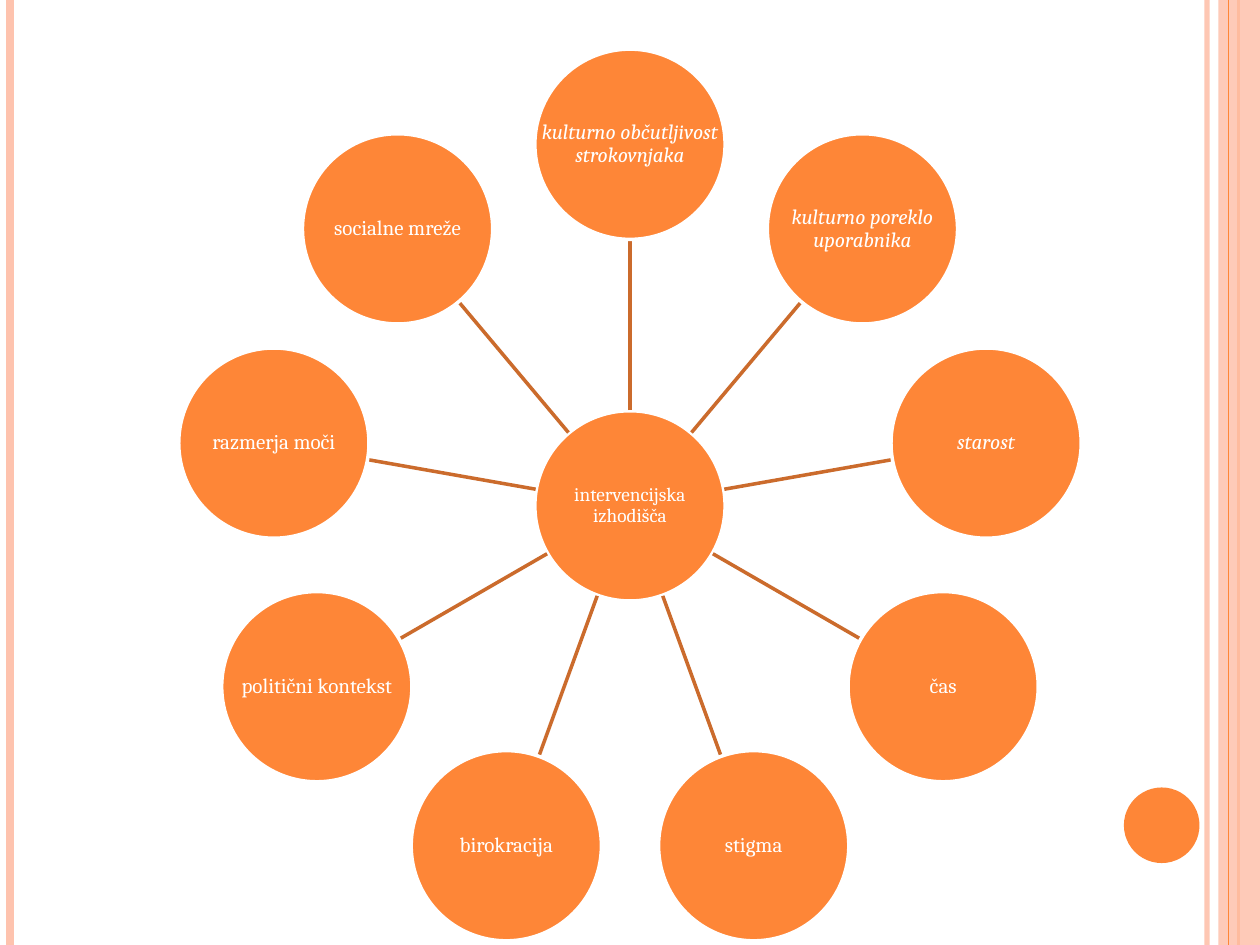
from math import cos, radians, sin

from lxml.etree import SubElement
from pptx import Presentation
from pptx.dml.color import RGBColor
from pptx.enum.shapes import MSO_CONNECTOR, MSO_SHAPE
from pptx.enum.text import MSO_ANCHOR, PP_ALIGN
from pptx.oxml.ns import qn
from pptx.util import Inches, Pt

ORANGE, DARK_ORANGE, PEACH, WHITE = "FE8637", "CB6B2C", "FEC3AE", "FFFFFF"
FONT = "Cambria"
NODE_SIZE = 1.51
LABEL_WIDTH = 1.48
ORBIT = 2.87
SPOKE_START, SPOKE_END = 0.76, 2.12

# Clockwise from the top: label, italic
TOPICS = [
    ("kulturno občutljivost strokovnjaka", True),
    ("kulturno poreklo uporabnika", True),
    ("starost", True),
    ("čas", False),
    ("stigma", False),
    ("birokracija", False),
    ("politični kontekst", False),
    ("razmerja moči", False),
    ("socialne mreže", False),
]


def paint(color_format, color):
    color_format.rgb = RGBColor.from_string(color)


def set_opacity(fill, percent):
    """Add an alpha value to a solid fill."""
    color = fill._xPr.find(qn("a:solidFill"))[0]
    SubElement(color, qn("a:alpha")).set("val", str(percent * 1000))


def add_line(slide, start, end, color, width, opacity=100):
    points = [Inches(value) for value in (*start, *end)]
    line = slide.shapes.add_connector(MSO_CONNECTOR.STRAIGHT, *points)
    line.line.width = Pt(width)
    line.line.fill.solid()
    paint(line.line.fill.fore_color, color)
    if opacity < 100:
        set_opacity(line.line.fill, opacity)
    SubElement(line._element.spPr, qn("a:effectLst"))


def add_filled_shape(slide, kind, box, color):
    shape = slide.shapes.add_shape(kind, *[Inches(value) for value in box])
    shape.shadow.inherit = False
    shape.fill.solid()
    paint(shape.fill.fore_color, color)
    shape.line.fill.background()
    return shape


def add_label(slide, center_x, center_y, text, size, italic):
    label = slide.shapes.add_textbox(
        Inches(center_x - LABEL_WIDTH / 2), Inches(center_y - NODE_SIZE / 2),
        Inches(LABEL_WIDTH), Inches(NODE_SIZE))
    frame = label.text_frame
    frame.word_wrap = True
    frame.vertical_anchor = MSO_ANCHOR.MIDDLE
    frame.margin_left = frame.margin_right = Inches(0.01)
    frame.margin_top = frame.margin_bottom = Inches(0.01)
    frame.text = text
    paragraph = frame.paragraphs[0]
    paragraph.alignment = PP_ALIGN.CENTER
    paragraph.line_spacing = 0.9
    font = paragraph.runs[0].font
    font.name, font.size, font.italic = FONT, Pt(size), italic
    paint(font.color, WHITE)


def add_node(slide, center_x, center_y, text, size=12, italic=False):
    box = (center_x - NODE_SIZE / 2, center_y - NODE_SIZE / 2, NODE_SIZE, NODE_SIZE)
    circle = add_filled_shape(slide, MSO_SHAPE.OVAL, box, ORANGE)
    paint(circle.line.color, WHITE)
    circle.line.width = Pt(2)
    add_label(slide, center_x, center_y, text, size, italic)


def add_frame(slide, left, top, width, height):
    """Vertical stripes along both edges and the round ornament."""
    right, bottom = left + width, top + height

    def add_stripe(x, color, line_width, opacity=100):
        add_line(slide, (x, top), (x, bottom), color, line_width, opacity)

    add_stripe(right - 0.42, PEACH, 3, 93)
    add_stripe(left + 0.08, PEACH, 4.5)
    add_stripe(right - 0.17, ORANGE, 1.5)
    band = add_filled_shape(slide, MSO_SHAPE.RECTANGLE, (right - 0.33, top, 0.33, height), PEACH)
    set_opacity(band.fill, 87)
    add_stripe(right - 0.25, ORANGE, 0.75)
    add_filled_shape(slide, MSO_SHAPE.OVAL, (right - 1.08, bottom - 1.25, 0.6, 0.6), ORANGE)


def add_radial_diagram(slide, left, top, width):
    """A hub with topics evenly spaced on a circle, the first one at the top."""
    hub_x = left + width / 2
    hub_y = top + NODE_SIZE / 2 + ORBIT

    def polar(radius, angle):
        return hub_x + radius * sin(angle), hub_y - radius * cos(angle)

    add_node(slide, hub_x, hub_y, "intervencijska izhodišča", size=11)
    for index, (text, italic) in enumerate(TOPICS):
        angle = radians(index * 360 / len(TOPICS))
        add_line(slide, polar(SPOKE_START, angle), polar(SPOKE_END, angle), DARK_ORANGE, 2)
        add_node(slide, *polar(ORBIT, angle), text, italic=italic)


def main():
    presentation = Presentation()
    presentation.slide_width, presentation.slide_height = Inches(10), Inches(7.5)
    slide = presentation.slides.add_slide(presentation.slide_layouts[6])
    add_frame(slide, 0, 0, 10, 7.5)
    add_radial_diagram(slide, 1.42, 0.39, 7.16)
    presentation.save("out.pptx")


if __name__ == "__main__":
    main()
